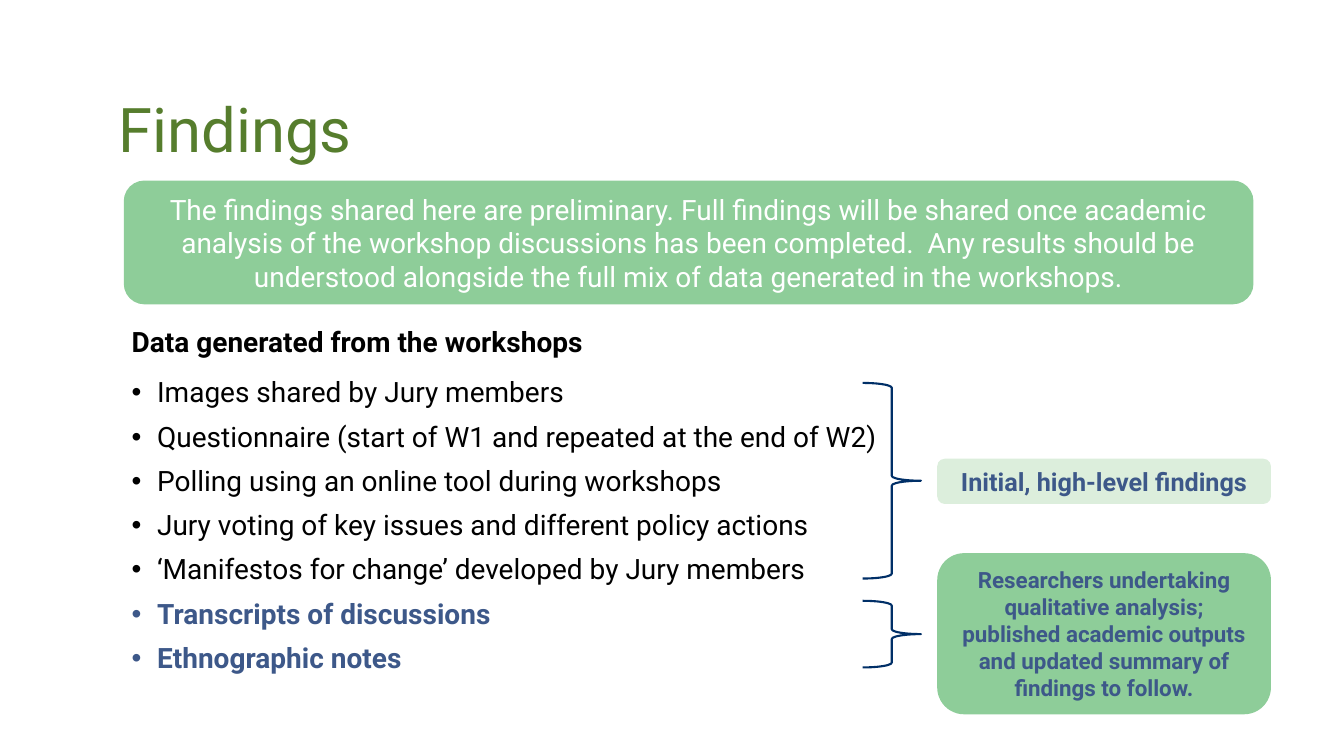
from lxml import etree
from pptx import Presentation
from pptx.dml.color import RGBColor
from pptx.enum import shapes, text
from pptx.oxml import ns
from pptx.util import Cm, Pt


def color(hex_value):
    return RGBColor.from_string(hex_value)


def write(shape, lines, size, hex_value, bold=False, line_spacing=None,
          align=text.PP_ALIGN.LEFT, anchor=text.MSO_ANCHOR.MIDDLE):
    frame = shape.text_frame
    frame.word_wrap = True
    frame.vertical_anchor = anchor
    frame.text = "\n".join(lines)
    for paragraph in frame.paragraphs:
        paragraph.alignment = align
        paragraph.line_spacing = line_spacing
        font = paragraph.font
        font.name, font.size, font.bold = "Roboto", Pt(size), bold
        font.color.rgb = color(hex_value)
    return frame


GREEN, PALE_GREEN, BLUE = "8ECD99", "DCEEDC", "3D5889"

deck = Presentation()
deck.slide_width, deck.slide_height = Cm(33.87), Cm(19.05)
slide = deck.slides.add_slide(deck.slide_layouts[6])
canvas = slide.shapes

# Title and heading of the list
title = canvas.add_textbox(Cm(2.74), Cm(1.5), Cm(29.21), Cm(3.68))
write(title, ["Findings"], 44, "567D2D", line_spacing=0.9)
heading = canvas.add_textbox(Cm(3.07), Cm(8.15), Cm(29.21), Cm(1.02))
write(heading, ["Data generated from the workshops"], 20, "000000", bold=True, line_spacing=0.9)

# Bulleted data sources; the last two await analysis
initial_sources = [
    "Images shared by Jury members",
    "Questionnaire (start of W1 and repeated at the end of W2)",
    "Polling using an online tool during workshops",
    "Jury voting of key issues and different policy actions",
    "‘Manifestos for change’ developed by Jury members",
]
later_sources = ["Transcripts of discussions", "Ethnographic notes"]
sources = canvas.add_textbox(Cm(3.07), Cm(9.42), Cm(29.21), Cm(8.38))
source_frame = write(sources, initial_sources + later_sources, 20, "000000",
                     line_spacing=0.9, anchor=text.MSO_ANCHOR.TOP)
for index, source in enumerate(source_frame.paragraphs):
    if index:
        source.space_before = Pt(10)
    if index >= len(initial_sources):
        source.font.bold = True
        source.font.color.rgb = color(BLUE)
    properties = source._p.get_or_add_pPr()
    properties.set("marL", str(Cm(0.64)))
    properties.set("indent", str(-Cm(0.64)))
    run_defaults = properties.find(ns.qn("a:defRPr"))
    run_defaults.addprevious(etree.Element(ns.qn("a:buFont"), typeface="Arial"))
    run_defaults.addprevious(etree.Element(ns.qn("a:buChar"), char="•"))

# Braces grouping the sources
for top, height in [(9.65, 4.93), (15.14, 1.68)]:
    brace = canvas.add_shape(shapes.MSO_SHAPE.RIGHT_BRACE,
                             Cm(21.74), Cm(top), Cm(1.47), Cm(height))
    brace.shadow.inherit = False
    brace.fill.background()
    brace.line.color.rgb = color("002F67")
    brace.line.width = Pt(1.5)

# Rounded boxes: notice above, outcomes beside the braces
boxes = [
    (3.12, 4.55, 28.47, 3.12, GREEN, "FFFFFF", 20, False,
     "The findings shared here are preliminary. Full findings will be shared once academic "
     "analysis of the workshop discussions has been completed.  Any results should be "
     "understood alongside the full mix of data generated in the workshops."),
    (23.62, 11.56, 8.41, 1.14, PALE_GREEN, BLUE, 18, True, "Initial, high-level findings"),
    (23.62, 13.94, 8.41, 4.06, GREEN, BLUE, 16, True,
     "Researchers undertaking qualitative analysis; published academic outputs "
     "and updated summary of findings to follow."),
]
for left, top, width, height, fill, ink, size, bold, message in boxes:
    box = canvas.add_shape(shapes.MSO_SHAPE.ROUNDED_RECTANGLE,
                           Cm(left), Cm(top), Cm(width), Cm(height))
    box.shadow.inherit = False
    box.fill.solid()
    box.fill.fore_color.rgb = color(fill)
    box.line.fill.background()
    write(box, [message], size, ink, bold, align=text.PP_ALIGN.CENTER)

deck.save("out.pptx")
